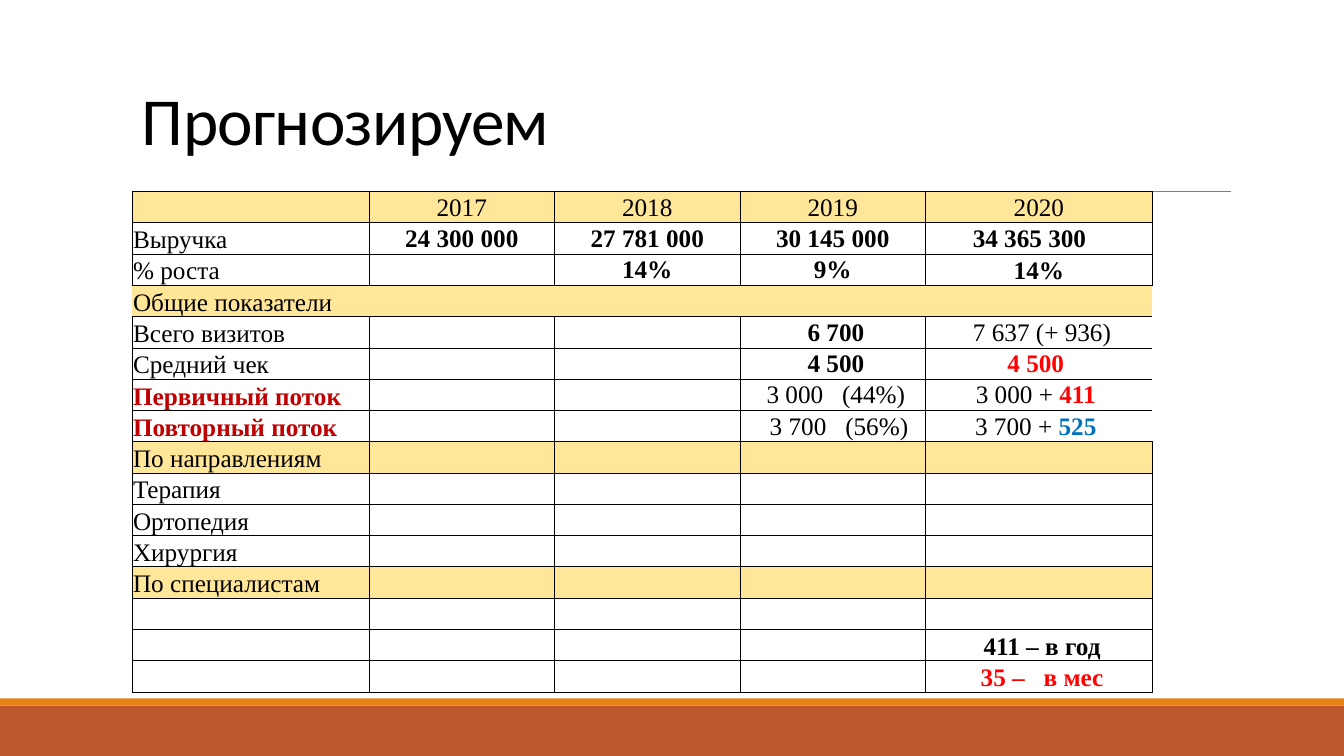
from lxml import etree
from pptx import Presentation
from pptx.dml.color import RGBColor
from pptx.enum.shapes import MSO_CONNECTOR, MSO_SHAPE
from pptx.enum.text import MSO_ANCHOR, PP_ALIGN
from pptx.oxml.ns import qn
from pptx.util import Inches, Pt

CENTER, LEFT = PP_ALIGN.CENTER, PP_ALIGN.LEFT
MIDDLE, BOTTOM = MSO_ANCHOR.MIDDLE, MSO_ANCHOR.BOTTOM

WIDTH, HEIGHT = 13.33, 7.5
TITLE = "Прогнозируем"
BLACK, RED, DARK_RED, BLUE = "000000", "FF0000", "C00000", "0070C0"
BAND, GREY = "FFE699", "808080"
FOOTER = [(7, 0.5, "BD582C"), (6.93, 0.07, "E48312")]  # top, height, colour
LEFT_EDGE, RULE_Y, RULE_END = 1.31, 1.9, 12.21

# A cell is a list of runs: (text, bold, colour)
EMPTY = []


def plain(text):
    return [(text, False, BLACK)]


def bold(text, color=BLACK):
    return [(text, True, color)]


ROWS = [
    [EMPTY, plain("2017"), plain("2018"), plain("2019"), plain("2020")],
    [plain("Выручка"), bold("24 300 000"), bold("27 781 000"), bold("30 145 000"),
     bold("34 365 300   ")],
    [plain("% роста"), EMPTY, bold("14%"), bold("9%"), bold("14%")],
    [plain("Общие показатели")],
    [plain("Всего визитов"), EMPTY, EMPTY, bold(" 6 700"), plain(" 7 637 (+ 936)")],
    [plain("Средний чек"), EMPTY, EMPTY, bold(" 4 500"), bold("4 500 ", RED)],
    [bold("Первичный поток", DARK_RED), EMPTY, EMPTY, plain(" 3 000   (44%)"),
     plain("3 000 + ") + bold("411 ", RED)],
    [bold("Повторный поток", DARK_RED), EMPTY, EMPTY, plain("  3 700   (56%)"),
     plain("3 700 + ") + bold("525 ", BLUE)],
    [plain("По направлениям")],
    [plain("Терапия")],
    [plain("Ортопедия")],
    [plain("Хирургия")],
    [plain("По специалистам")],
    [],
    [EMPTY, EMPTY, EMPTY, EMPTY, bold(" 411 – в год")],
    [EMPTY, EMPTY, EMPTY, EMPTY, bold(" 35 –   в мес", RED)],
]
COL_WIDTHS = [2.35, 1.84, 1.84, 1.84, 2.25]
ROW_HEIGHT, SECTION_HEIGHT = 0.28, 0.31
BAND_ROWS = {0, 3, 8, 12}
SECTION_ROW = 3              # has no vertical borders
OPEN_ROWS = range(4, 8)      # have no border on the right
BOTTOM_ROWS = {2, 14, 15}    # figures of the last column sit at the bottom


def rgb(color):
    return RGBColor.from_string(color)


def style_run(r, text, size, font, color, is_bold=False):
    r.text = text
    r.font.size, r.font.name, r.font.bold = Pt(size), font, is_bold
    r.font.color.rgb = rgb(color)


def set_borders(cell, sides):
    """Draw the named sides (L, R, T, B) and clear the others."""
    tcPr = cell._tc.get_or_add_tcPr()
    for i, side in enumerate("LRTB"):
        ln = etree.Element(qn("a:ln" + side), w=str(Pt(0.5)))
        if side in sides:
            fill = etree.SubElement(ln, qn("a:solidFill"))
            etree.SubElement(fill, qn("a:srgbClr"), val=BLACK)
        else:
            etree.SubElement(ln, qn("a:noFill"))
        tcPr.insert(i, ln)


def border_sides(row, col):
    last = len(COL_WIDTHS) - 1
    if row == SECTION_ROW:
        return "TB"
    return "LTB" if row in OPEN_ROWS and col == last else "LRTB"


def fill_cell(cell, runs, row, col):
    cell.margin_left = cell.margin_right = cell.margin_top = Inches(0.01)
    cell.margin_bottom = 0
    at_bottom = col == 0 or (col == 4 and row in BOTTOM_ROWS)
    cell.vertical_anchor = BOTTOM if at_bottom else MIDDLE
    if row in BAND_ROWS:
        cell.fill.solid()
        cell.fill.fore_color.rgb = rgb(BAND)
    else:
        cell.fill.background()
    set_borders(cell, border_sides(row, col))
    p = cell.text_frame.paragraphs[0]
    p.alignment = CENTER if col else LEFT
    for text, is_bold, color in runs:
        style_run(p.add_run(), text, 18, "Times New Roman", color, is_bold)
    if not runs:
        end = etree.SubElement(p._p, qn("a:endParaRPr"), sz="1800")
        etree.SubElement(end, qn("a:latin"), typeface="Times New Roman")


def add_frame(s):
    for top, height, color in FOOTER:
        bar = s.shapes.add_shape(MSO_SHAPE.RECTANGLE, 0, Inches(top),
                                 Inches(WIDTH), Inches(height))
        bar.shadow.inherit = False
        bar.fill.solid()
        bar.fill.fore_color.rgb = rgb(color)
        bar.line.fill.background()
    rule = s.shapes.add_connector(MSO_CONNECTOR.STRAIGHT, Inches(LEFT_EDGE), Inches(RULE_Y),
                                  Inches(RULE_END), Inches(RULE_Y))
    rule.line.color.rgb = rgb(GREY)
    rule.line.width = Pt(0.5)
    etree.SubElement(rule._element.spPr, qn("a:effectLst"))


def add_title(s):
    box = s.shapes.add_textbox(Inches(LEFT_EDGE), Inches(0.92), Inches(7.85), Inches(0.71))
    tf = box.text_frame
    tf.word_wrap = True
    tf.vertical_anchor = BOTTOM
    p = tf.paragraphs[0]
    p.line_spacing = 0.85
    r = p.add_run()
    style_run(r, TITLE, 48, "Calibri", BLACK)
    r.font._element.set("spc", "-50")


def add_forecast_table(s):
    heights = [SECTION_HEIGHT if i == SECTION_ROW else ROW_HEIGHT for i in range(len(ROWS))]
    table = s.shapes.add_table(len(ROWS), len(COL_WIDTHS), Inches(LEFT_EDGE), Inches(RULE_Y),
                               Inches(sum(COL_WIDTHS)), Inches(sum(heights))).table
    table.first_row = table.horz_banding = False
    for column, width in zip(table.columns, COL_WIDTHS):
        column.width = Inches(width)
    for i, (cells, height) in enumerate(zip(ROWS, heights)):
        table.rows[i].height = Inches(height)
        for j in range(len(COL_WIDTHS)):
            fill_cell(table.cell(i, j), cells[j] if j < len(cells) else EMPTY, i, j)


def main():
    prs = Presentation()
    prs.slide_width, prs.slide_height = Inches(WIDTH), Inches(HEIGHT)
    s = prs.slides.add_slide(prs.slide_layouts[6])
    add_frame(s)
    add_title(s)
    add_forecast_table(s)
    prs.save("out.pptx")


if __name__ == "__main__":
    main()
